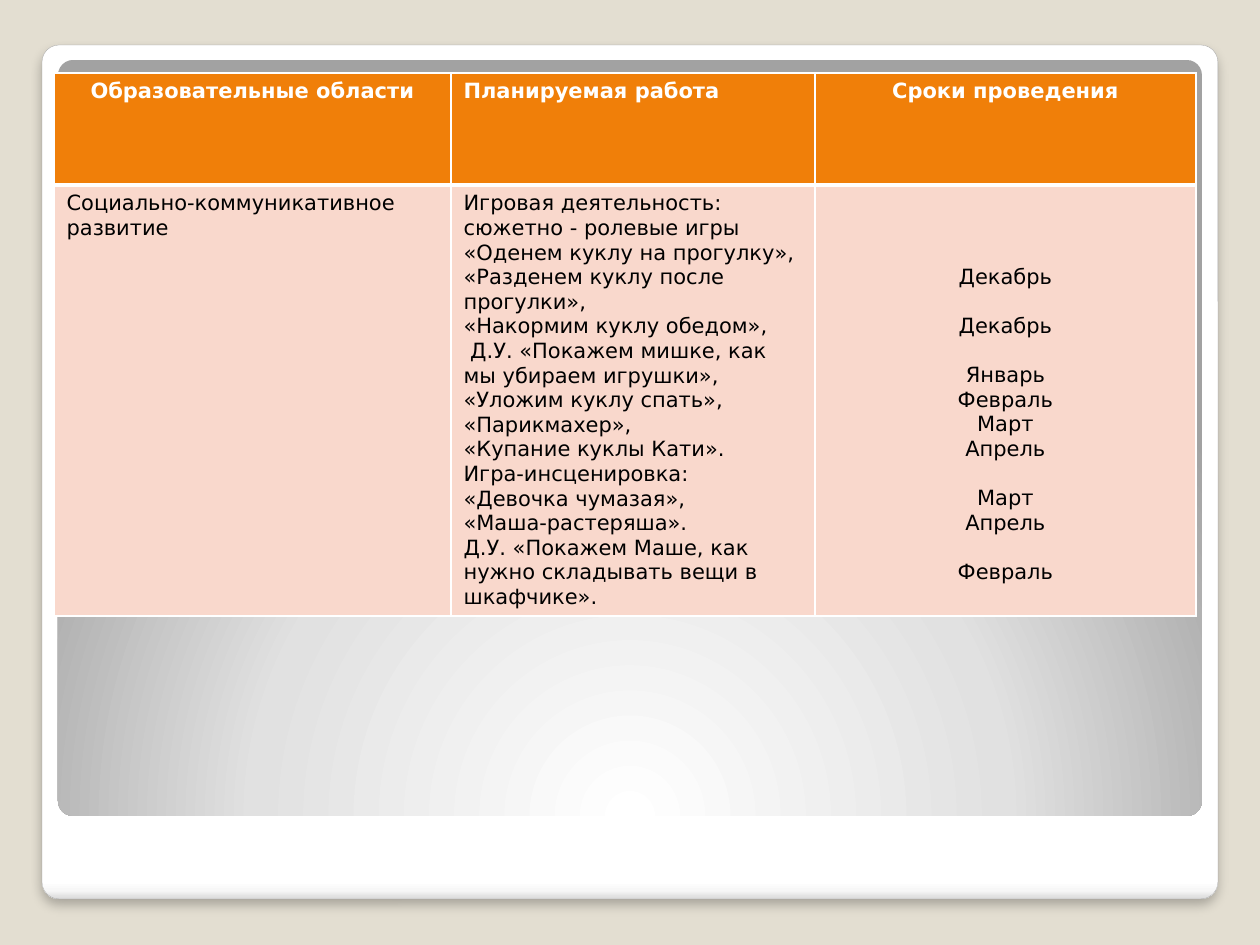
from pptx import Presentation
from pptx.dml.color import RGBColor
from pptx.enum.shapes import MSO_SHAPE
from pptx.enum.text import PP_ALIGN
from pptx.oxml import parse_xml
from pptx.oxml.ns import nsdecls, qn
from pptx.util import Emu, Pt

ROUND = MSO_SHAPE.ROUNDED_RECTANGLE
LEFT, CENTER = PP_ALIGN.LEFT, PP_ALIGN.CENTER
PX = 914400 // 126
FONT = "DejaVu Sans"
SAND = RGBColor(0xE3, 0xDE, 0xD1)
GRAY = RGBColor(0xA4, 0xA4, 0xA4)
WHITE = RGBColor(0xFF, 0xFF, 0xFF)
BLACK = RGBColor(0, 0, 0)
ORANGE = RGBColor(0xF0, 0x7F, 0x09)
PINK = RGBColor(0xF9, 0xD8, 0xCC)

COLS = (397, 364, 381)
ROWS = (112, 430)
HEADS = (("Образовательные области", CENTER),
         ("Планируемая работа", LEFT),
         ("Сроки проведения", CENTER))
AREA = ["Социально-коммуникативное развитие"]
GAMES = [
    "Игровая деятельность: сюжетно - ролевые игры «Оденем куклу на прогулку», "
    "«Разденем куклу после прогулки»,",
    "«Накормим куклу обедом»,",
    " Д.У. «Покажем мишке, как мы убираем игрушки»,",
    "«Уложим куклу спать»,",
    "«Парикмахер»,",
    "«Купание куклы Кати».",
    "Игра-инсценировка:",
    "«Девочка чумазая»,",
    "«Маша-растеряша».",
    "Д.У. «Покажем Маше, как нужно складывать вещи в шкафчике».",
]
MONTHS = ["Декабрь", "Декабрь", "Январь", "Февраль", "Март", "Апрель",
          "Март", "Апрель", "Февраль"]
GAPS = (1, 2, 6, 8)


def px(n):
    return Emu(n * PX)


def panel(slide, box, stops, path):
    shape = slide.shapes.add_shape(ROUND, *map(px, box))
    shape.adjustments[0] = 0.02
    shape.shadow.inherit = False
    shape.fill.background()
    shape.line.fill.background()
    marks = "".join(
        f'<a:gs pos="{pos * 1000}"><a:srgbClr val="{tone}"/></a:gs>'
        for pos, tone in stops)
    props = shape._element.spPr
    props.replace(props.find(qn("a:noFill")), parse_xml(
        f'<a:gradFill {nsdecls("a")} rotWithShape="1">'
        f'<a:gsLst>{marks}</a:gsLst>{path}</a:gradFill>'))
    return shape


def shade(shape):
    shape._element.spPr.find(qn("a:effectLst")).append(parse_xml(
        f'<a:outerShdw {nsdecls("a")} blurRad="{Pt(6)}" dist="{Pt(4)}" '
        'dir="5400000" algn="ctr" rotWithShape="0"><a:srgbClr val="000000">'
        '<a:alpha val="25000"/></a:srgbClr></a:outerShdw>'))


def edge(cell, top, low):
    props = cell._tc.get_or_add_tcPr()
    sides = (("L", 1), ("R", 1), ("T", top), ("B", low))
    for spot, (side, width) in enumerate(sides):
        props.insert(spot, parse_xml(
            f'<a:ln{side} {nsdecls("a")} w="{Pt(width)}"><a:solidFill>'
            f'<a:srgbClr val="{WHITE}"/></a:solidFill></a:ln{side}>'))


def write(cell, lines, color, fill, bold=False, align=LEFT, gaps=()):
    cell.fill.solid()
    cell.fill.fore_color.rgb = fill
    frame = cell.text_frame
    for i, line in enumerate(lines):
        para = frame.add_paragraph() if i else frame.paragraphs[0]
        para.text = line
        para.alignment = align
        if i in gaps:
            para.space_before = Pt(14)
        font = para.font
        font.name, font.size, font.bold = FONT, Pt(12), bold
        font.color.rgb = color


def plan(slide):
    table = slide.shapes.add_table(
        2, 3, px(54), px(73), px(sum(COLS)), px(sum(ROWS))).table
    table.horz_banding = False
    for col, width in zip(table.columns, COLS):
        col.width = px(width)
    for row, height in zip(table.rows, ROWS):
        row.height = px(height)
    for i, (text, align) in enumerate(HEADS):
        write(table.cell(0, i), [text], WHITE, ORANGE, True, align)
    write(table.cell(1, 0), AREA, BLACK, PINK)
    write(table.cell(1, 1), GAMES, BLACK, PINK)
    dates = table.cell(1, 2)
    write(dates, MONTHS, BLACK, PINK, align=CENTER, gaps=GAPS)
    dates.margin_top = px(80)
    for i in range(3):
        edge(table.cell(0, i), 1, 3)
        edge(table.cell(1, i), 3, 1)


def main():
    deck = Presentation()
    deck.slide_width, deck.slide_height = px(1260), px(945)
    slide = deck.slides.add_slide(deck.slide_layouts[6])
    back = slide.background.fill
    back.solid()
    back.fore_color.rgb = SAND
    card = panel(slide, (42, 45, 1176, 854),
                 ((0, "FFFFFF"), (98, "FFFFFF"), (99, "F7F7F7"), (100, "DADADA")),
                 '<a:lin ang="5400000" scaled="0"/>')
    card.line.color.rgb = GRAY
    card.line.width = Pt(0.16)
    shade(card)
    panel(slide, (58, 60, 1144, 756),
          ((0, "FFFFFF"), (55, "E1E1E1"), (100, "A2A2A2")),
          '<a:path path="circle"><a:fillToRect l="50000" t="175000" '
          'r="50000" b="-75000"/></a:path>')
    plan(slide)
    deck.save("out.pptx")


if __name__ == "__main__":
    main()
